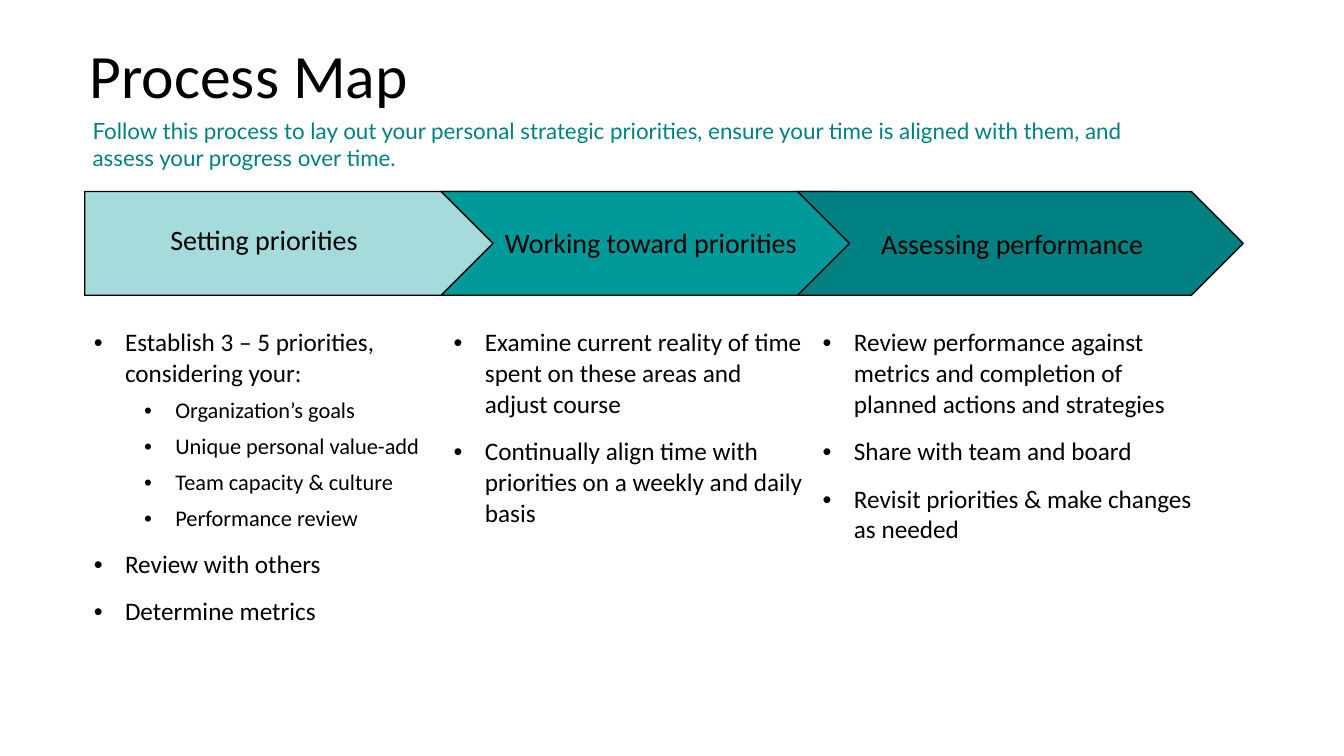
"""Build the Process Map slide: three arrow steps with bullet points below."""
from lxml import etree
from pptx import Presentation
from pptx.dml.color import RGBColor
from pptx.enum.shapes import MSO_SHAPE
from pptx.enum.text import MSO_ANCHOR, MSO_AUTO_SIZE
from pptx.oxml.ns import qn
from pptx.util import Inches, Pt

COLORS = {"black": "000000", "teal": "009999", "dark_teal": "008080"}


def write(p, text, size=18, color="black", font="Calibri"):
    r = p.add_run()
    r.text = text
    r.font.size = Pt(size)
    r.font.name = font
    r.font.color.rgb = RGBColor.from_string(COLORS[color])


def add_text(s, box, text, wrap=True, anchor=MSO_ANCHOR.TOP, spacing=1.0, **fmt):
    tf = s.shapes.add_textbox(*map(Inches, box)).text_frame
    tf.word_wrap = wrap
    tf.auto_size = MSO_AUTO_SIZE.NONE
    tf.vertical_anchor = anchor
    p = tf.paragraphs[0]
    p.line_spacing = spacing
    write(p, text, **fmt)


prs = Presentation()
prs.slide_width, prs.slide_height = Inches(13.33), Inches(7.5)
s = prs.slides.add_slide(prs.slide_layouts[6])

add_text(s, (0.79, 0.05, 11.5, 1.45), "Process Map",
         anchor=MSO_ANCHOR.MIDDLE, spacing=0.9, size=44)

steps = [
    (MSO_SHAPE.PENTAGON, "teal", 35, "Setting priorities", (1.59, 2.16, 2.09, 0.44)),
    (MSO_SHAPE.CHEVRON, "teal", 100, "Working toward priorities", (4.91, 2.19, 3.19, 0.44)),
    (MSO_SHAPE.CHEVRON, "dark_teal", 100, "Assessing performance", (8.64, 2.2, 2.83, 0.44)),
]
for i, (kind, color, opacity, label, box) in enumerate(steps):
    sp = s.shapes.add_shape(kind, Inches(0.84 + 3.535 * i), Inches(1.9),
                            Inches(4.42), Inches(1.03))
    sp.shadow.inherit = False
    sp.fill.solid()
    sp.fill.fore_color.rgb = RGBColor.from_string(COLORS[color])
    sp.line.color.rgb = RGBColor.from_string(COLORS["black"])
    sp.line.width = Pt(1)
    if opacity < 100:
        rgb = sp.element.spPr.find(qn("a:solidFill")).find(qn("a:srgbClr"))
        etree.SubElement(rgb, qn("a:alpha"), val=str(opacity * 1000))

for kind, color, opacity, label, box in steps:
    add_text(s, box, label, wrap=False, size=20)

columns = [
    (3.57, [
        (0, "Establish 3 – 5 priorities, considering your:"),
        (1, "Organization’s goals"),
        (1, "Unique personal value-add"),
        (1, "Team capacity & culture"),
        (1, "Performance review"),
        (0, "Review with others"),
        (0, "Determine metrics"),
    ]),
    (3.66, [
        (0, "Examine current reality of time spent on these areas and adjust course"),
        (0, "Continually align time with priorities on a weekly and daily basis"),
    ]),
    (3.9, [
        (0, "Review performance against metrics and completion of planned actions and strategies"),
        (0, "Share with team and board"),
        (0, "Revisit priorities & make changes as needed"),
    ]),
]
table = s.shapes.add_table(1, len(columns), Inches(0.83), Inches(3.2),
                           Inches(11.13), Inches(3.03)).table
table.first_row = False
table.horz_banding = False
for i, (width, points) in enumerate(columns):
    table.columns[i].width = Inches(width)
    cell = table.cell(0, i)
    cell.fill.background()
    tf = cell.text_frame
    for n, (level, text) in enumerate(points):
        p = tf.add_paragraph() if n else tf.paragraphs[0]
        pPr = p._p.get_or_add_pPr()
        pPr.set("marL", str(Inches(0.31 + 0.5 * level)))
        pPr.set("indent", str(Inches(-0.31)))
        etree.SubElement(pPr, qn("a:buFont"), typeface="Arial")
        etree.SubElement(pPr, qn("a:buChar"), char="•")
        p.level = level
        p.space_before = Pt((6 if level else 12) if n else 0)
        write(p, text, size=16 if level else 18)

add_text(s, (0.82, 1.11, 10.61, 0.64),
         "Follow this process to lay out your personal strategic priorities, ensure your "
         "time is aligned with them, and assess your progress over time.",
         size=16, color="dark_teal", font="Lato")

prs.save("out.pptx")
